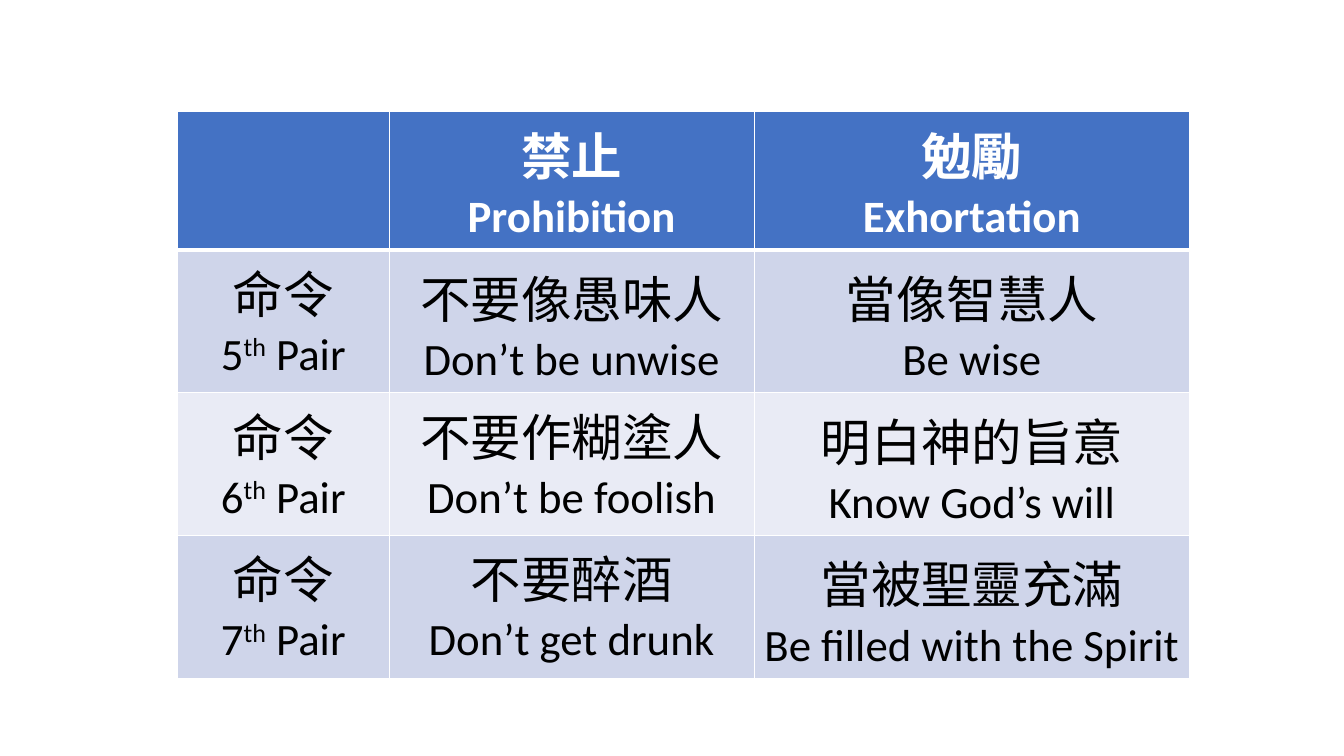
from pptx import Presentation
from pptx.dml.color import RGBColor
from pptx.enum import text
from pptx.oxml import ns
from pptx.util import Inches, Pt
from lxml import etree

# Content: each cell is (Chinese, English, line spacing of the Chinese)
LOOSE = 1.07
ROWS = [
    [None, ("禁止", "Prohibition", None), ("勉勵", "Exhortation", None)],
    [("命令", "5^th^ Pair", None), ("不要像愚味人", "Don’t be unwise", LOOSE),
     ("當像智慧人", "Be wise", LOOSE)],
    [("命令", "6^th^ Pair", None), ("不要作糊塗人", "Don’t be foolish", None),
     ("明白神的旨意", "Know God’s will", LOOSE)],
    [("命令", "7^th^ Pair", None), ("不要醉酒", "Don’t get drunk", None),
     ("當被聖靈充滿", "Be filled with the Spirit", LOOSE)],
]
LEFT, TOP = 1.76, 1.11
WIDTHS = [2.1, 3.62, 4.32]
HEIGHTS = [1.35, 1.41, 1.41, 1.41]


class Theme:
    font = "Calibri"
    large, small = 36, 32
    head = "4472C4"
    bands = ["E9EBF5", "CFD5EA"]
    light, dark = "FFFFFF", "000000"
    thin, thick = 1, 3


def border(cell, head):
    """Draw white lines on all four sides, heavier below the header."""
    props = cell._tc.get_or_add_tcPr()
    for place, side in enumerate(("lnL", "lnR", "lnT", "lnB")):
        wide = Theme.thick if head and side == "lnB" else Theme.thin
        line = etree.Element(ns.qn("a:" + side), w=str(Pt(wide)))
        fill = etree.SubElement(line, ns.qn("a:solidFill"))
        etree.SubElement(fill, ns.qn("a:srgbClr"), val=Theme.light)
        props.insert(place, line)


def write(para, words, size, head):
    """Add runs; the part between carets is raised."""
    para.alignment = text.PP_ALIGN.CENTER
    for place, part in enumerate(words.split("^")):
        run = para.add_run()
        run.text = part
        font = run.font
        font.name, font.size, font.bold = Theme.font, Pt(size), head
        font.color.rgb = RGBColor.from_string(Theme.light if head else Theme.dark)
        if place % 2:
            run._r.get_or_add_rPr().set("baseline", "30000")


def main():
    deck = Presentation()
    deck.slide_width, deck.slide_height = Inches(13.33), Inches(7.5)
    slide = deck.slides.add_slide(deck.slide_layouts[6])

    # Table grid
    frame = slide.shapes.add_table(
        len(ROWS), len(WIDTHS), Inches(LEFT), Inches(TOP),
        Inches(sum(WIDTHS)), Inches(sum(HEIGHTS)))
    table = frame.table
    for col, wide in zip(table.columns, WIDTHS):
        col.width = Inches(wide)
    for row, high in zip(table.rows, HEIGHTS):
        row.height = Inches(high)

    # Cells
    for r, row in enumerate(ROWS):
        head = r == 0
        for c, item in enumerate(row):
            cell = table.cell(r, c)
            cell.fill.solid()
            cell.fill.fore_color.rgb = RGBColor.from_string(
                Theme.head if head else Theme.bands[r % 2])
            border(cell, head)
            if item:
                upper, lower, space = item
                first = cell.text_frame.paragraphs[0]
                first.line_spacing = space
                write(first, upper, Theme.large, head)
                write(cell.text_frame.add_paragraph(), lower, Theme.small, head)

    deck.save("out.pptx")


if __name__ == "__main__":
    main()
